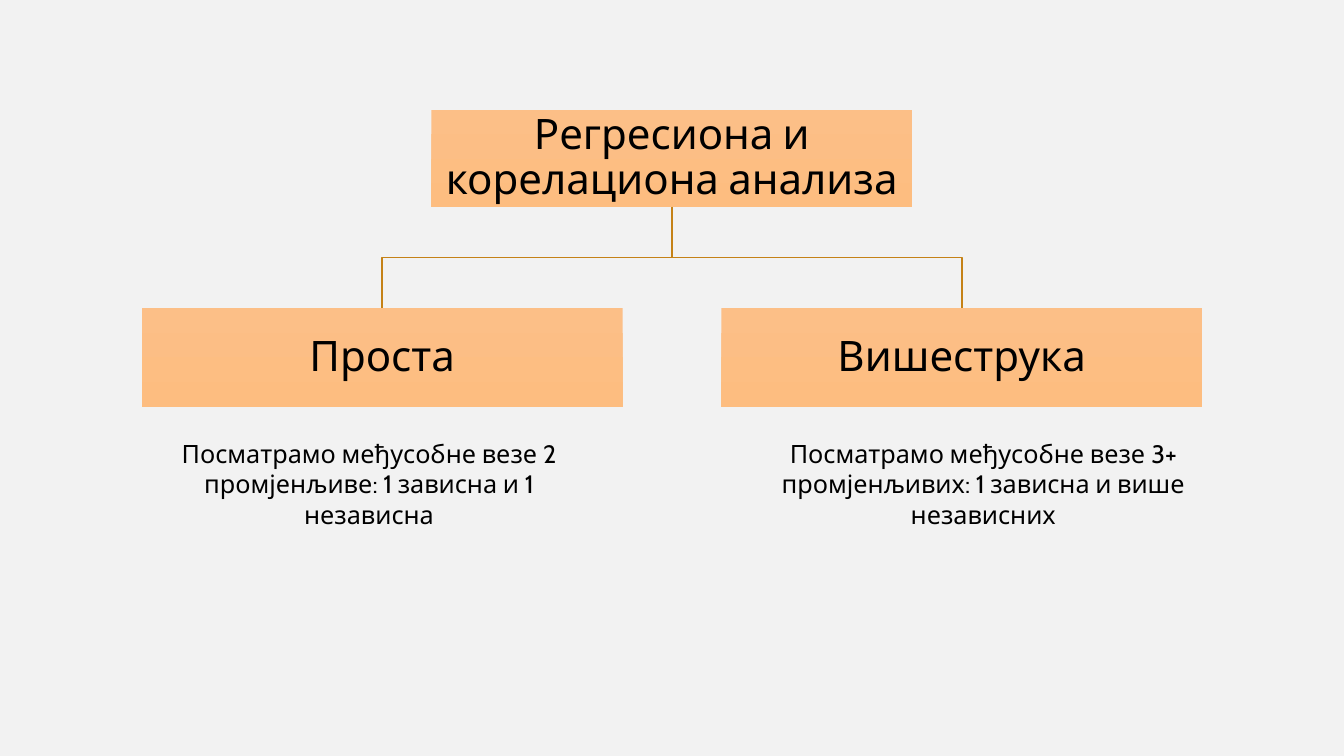
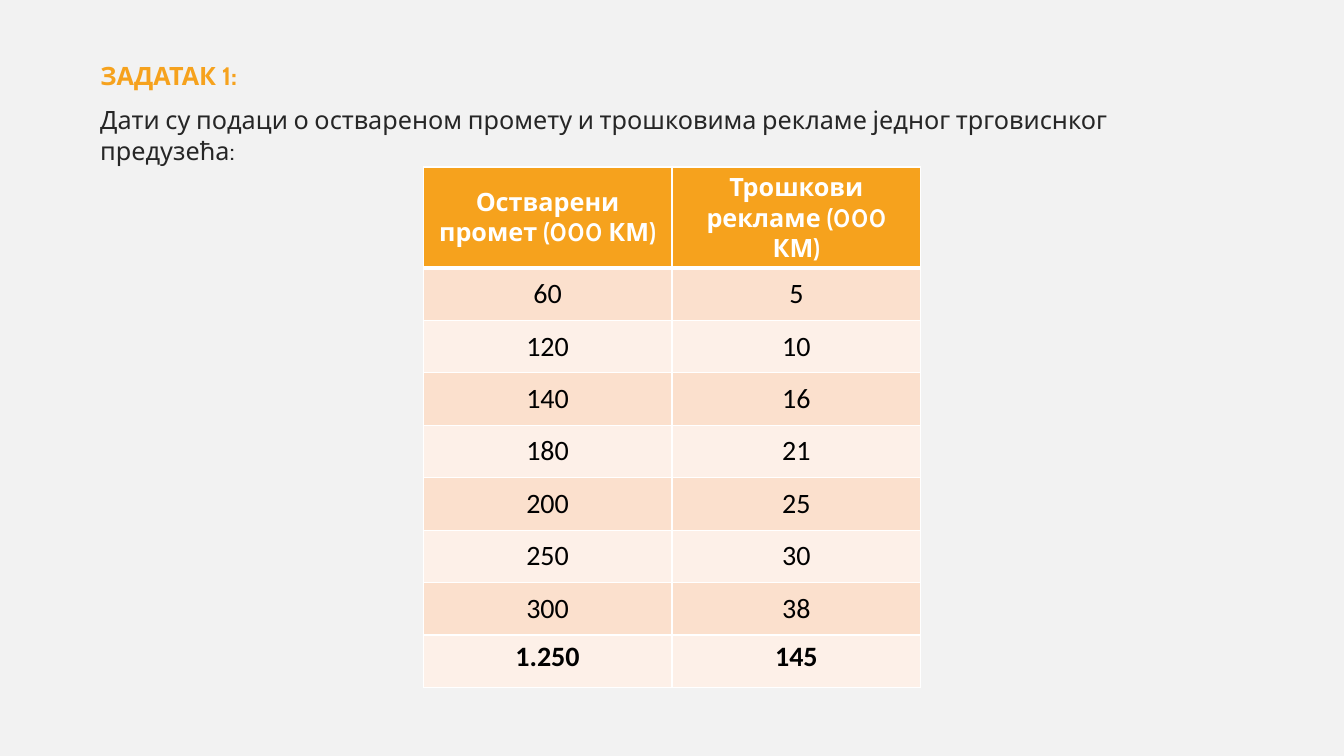
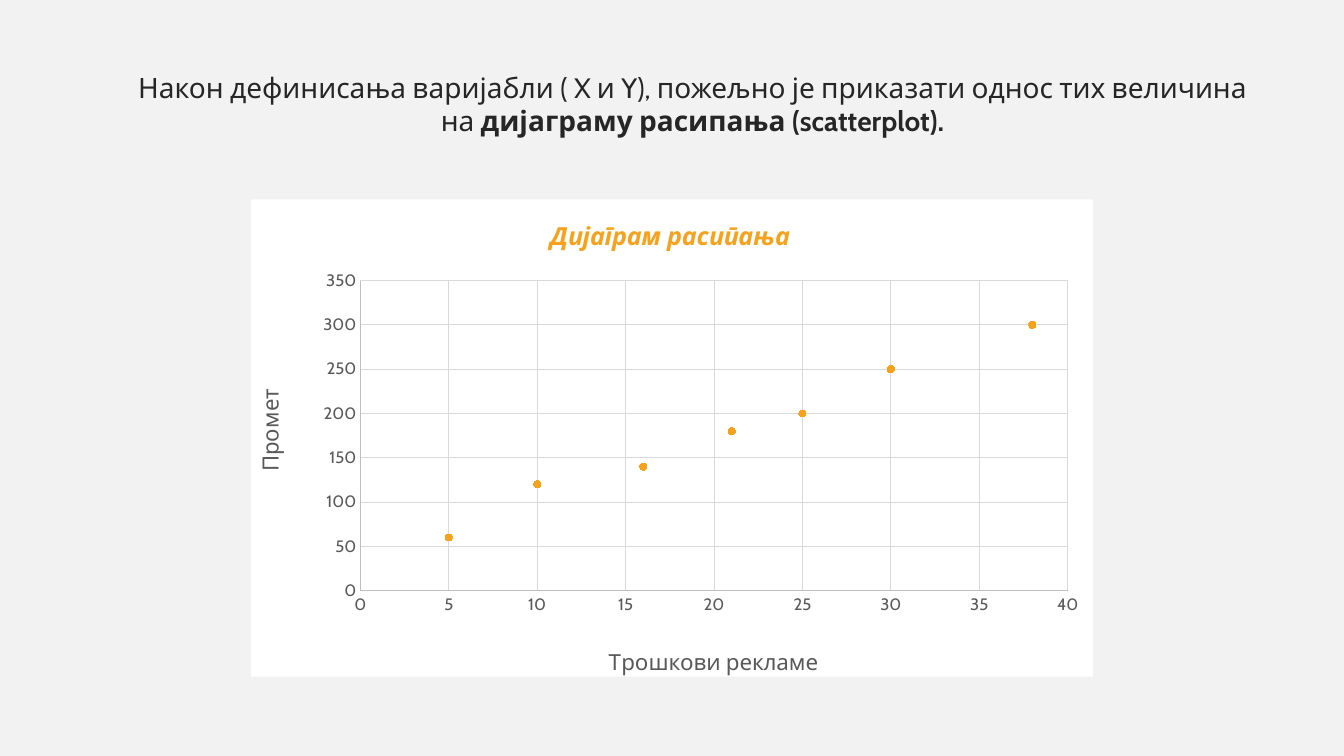
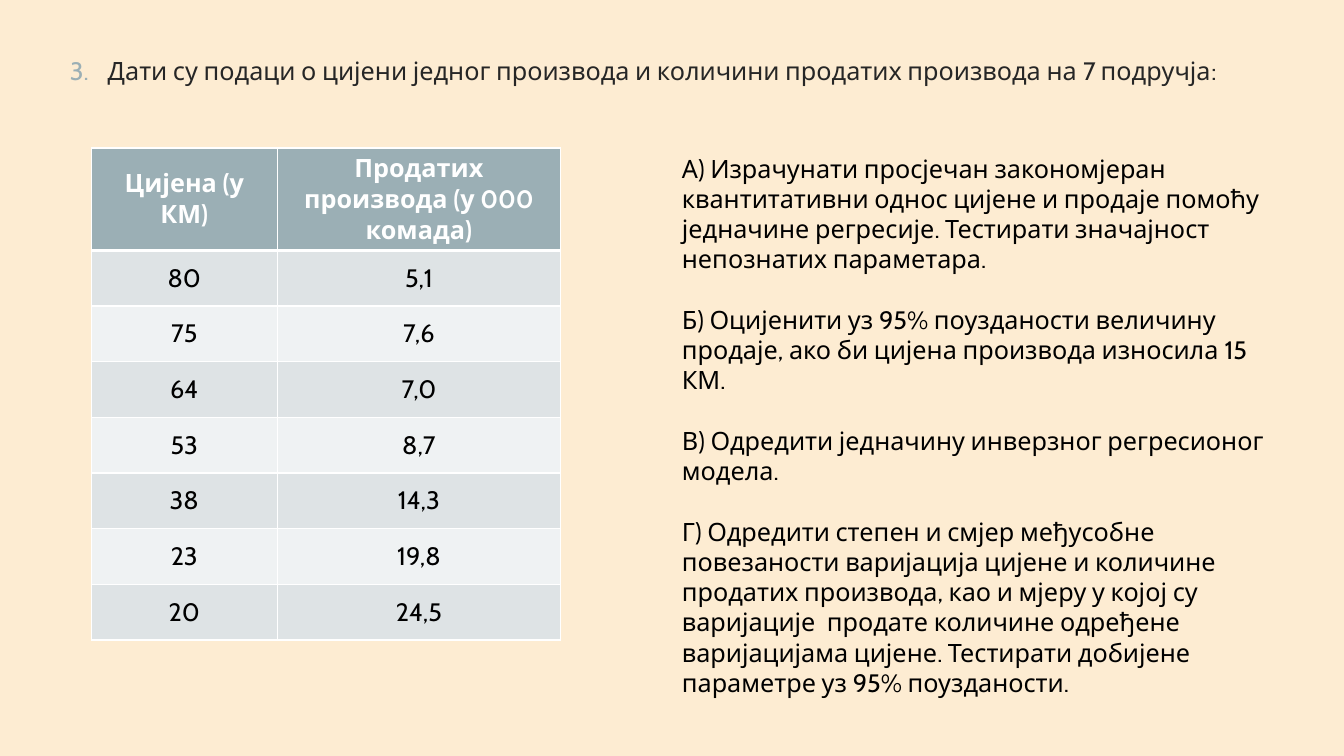
"""Build four slides on simple and multiple regression and correlation analysis."""
from lxml import etree
from pptx import Presentation
from pptx.chart.data import XyChartData
from pptx.dml.color import RGBColor
from pptx.enum.chart import XL_CHART_TYPE, XL_MARKER_STYLE, XL_TICK_MARK
from pptx.enum.shapes import MSO_CONNECTOR, MSO_SHAPE
from pptx.enum.text import MSO_ANCHOR, MSO_AUTO_SIZE, PP_ALIGN
from pptx.oxml import parse_xml
from pptx.oxml.ns import nsdecls, qn
from pptx.util import Emu, Pt

LEFT, CENTER = PP_ALIGN.LEFT, PP_ALIGN.CENTER
TOP, MIDDLE = MSO_ANCHOR.TOP, MSO_ANCHOR.MIDDLE
NO_FIT = MSO_AUTO_SIZE.NONE
ELBOW, RECTANGLE = MSO_CONNECTOR.ELBOW, MSO_SHAPE.RECTANGLE
SCATTER, CIRCLE = XL_CHART_TYPE.XY_SCATTER, XL_MARKER_STYLE.CIRCLE
NO_TICK = XL_TICK_MARK.NONE

BLACK = RGBColor(0x00, 0x00, 0x00)
WHITE = RGBColor(0xFF, 0xFF, 0xFF)
INK = RGBColor(0x26, 0x26, 0x26)
PAPER = RGBColor(0xF2, 0xF2, 0xF2)
CREAM = RGBColor(0xFD, 0xEC, 0xD2)
ORANGE = RGBColor(0xF6, 0xA2, 0x1D)
BROWN = RGBColor(0xC5, 0x82, 0x17)
BOX_TOP = RGBColor(0xFC, 0xBF, 0x87)
BOX_BOTTOM = RGBColor(0xFD, 0xBD, 0x80)
ORANGE_BANDS = (RGBColor(0xFB, 0xE0, 0xCD), RGBColor(0xFD, 0xF0, 0xE8))
STEEL = RGBColor(0x9B, 0xAF, 0xB5)
STEEL_BANDS = (RGBColor(0xDE, 0xE3, 0xE5), RGBColor(0xEF, 0xF2, 0xF3))
AXIS_TEXT = RGBColor(0x59, 0x59, 0x59)
AXIS_LINE = RGBColor(0xBF, 0xBF, 0xBF)
GRID_LINE = RGBColor(0xD9, 0xD9, 0xD9)

FONT = "Cabin"
LANGUAGE = "sr-Cyrl-BA"
PX = 9525
SLIDE_SIZE = (1280, 720)
CONTENT_LAYOUT, TITLE_LAYOUT, BLANK_LAYOUT = 1, 5, 6

ROOT = "Регресиона и корелациона анализа"
BRANCHES = [
    ("Проста", 122, "Посматрамо међусобне везе 2 промјенљиве: 1 зависна и 1 независна"),
    ("Вишеструка", 707, "Посматрамо међусобне везе 3+ промјенљивих: 1 зависна и више независних"),
]

TASK = "ЗАДАТАК 1:"
TASK_TEXT = "Дати су подаци о оствареном промету и трошковима рекламе једног трговиснког предузећа:"
SALES_HEADER = ("Остварени промет (000 КМ)", "Трошкови рекламе (000 КМ)")
SALES = [(60, 5), (120, 10), (140, 16), (180, 21), (200, 25), (250, 30), (300, 38)]
SALES_TOTAL = ("1.250", "145")

PLOT_INTRO = "Након дефинисања варијабли ( X и Y), пожељно је приказати однос тих величина на "
PLOT_TERM = "дијаграму расипања (scatterplot)."
CHART_TITLE = "Дијаграм расипања"
PLOT_LAYOUT = {"x": 0.13, "y": 0.17, "w": 0.84, "h": 0.65}

EXERCISE = "Дати су подаци о цијени једног производа и количини продатих производа на 7 подручја:"
EXERCISE_NUMBER = 3
PRICES = [
    ("Цијена (у КМ)", "Продатих производа (у 000 комада)"),
    ("80", "5,1"), ("75", "7,6"), ("64", "7,0"), ("53", "8,7"),
    ("38", "14,3"), ("23", "19,8"), ("20", "24,5"),
]
QUESTIONS = [
    "А) Израчунати просјечан закономјеран квантитативни однос цијене и продаје помоћу "
    "једначине регресије. Тестирати значајност непознатих параметара.",
    "Б) Оцијенити уз 95% поузданости величину продаје, ако би цијена производа износила 15 КМ.",
    "В) Одредити једначину инверзног регресионог модела.",
    "Г) Одредити степен и смјер међусобне повезаности варијација цијене и количине "
    "продатих производа, као и мјеру у којој су варијације  продате количине одређене "
    "варијацијама цијене. Тестирати добијене параметре уз 95% поузданости.",
]


def px(*lengths):
    return [Emu(round(length * PX)) for length in lengths]


def style(frame, size, color, align=LEFT, bold=False, font=FONT):
    for paragraph in frame.paragraphs:
        paragraph.alignment = align
        for span in paragraph.runs:
            span.font.size = Pt(size)
            span.font.name = font
            span.font.bold = bold
            span.font.color.rgb = color
            span._r.get_or_add_rPr().set("lang", LANGUAGE)


def place(item, area):
    item.left, item.top, item.width, item.height = px(*area)


def add_text(page, area, text, size, color, align=LEFT):
    frame = page.shapes.add_textbox(*px(*area)).text_frame
    frame.word_wrap = True
    frame.text = text
    style(frame, size, color, align)
    return frame


def fill_placeholder(holder, area, text):
    place(holder, area)
    frame = holder.text_frame
    frame.text = text
    frame.word_wrap = True
    frame.auto_size = NO_FIT
    frame.vertical_anchor = TOP
    frame.paragraphs[0].space_before = Pt(0)
    return frame


def add_box(page, text, area):
    box = page.shapes.add_shape(RECTANGLE, *px(*area))
    box.shadow.inherit = False
    box.line.fill.background()
    box.fill.gradient()
    box.fill.gradient_angle = 270
    for stop, color in zip(box.fill.gradient_stops, (BOX_TOP, BOX_BOTTOM)):
        stop.color.rgb = color
    frame = box.text_frame
    frame.text = text
    frame.word_wrap = True
    frame.vertical_anchor = MIDDLE
    frame.margin_left, frame.margin_top, frame.margin_right, frame.margin_bottom = px(2, 2, 2, 2)
    frame.paragraphs[0].line_spacing = 0.9
    style(frame, 30, BLACK, CENTER)
    return box


def join_boxes(page, parent, child, start, end):
    (start_x, start_y), (end_x, end_y) = start, end
    branch = page.shapes.add_connector(ELBOW, *px(*start, *end))
    branch.begin_connect(parent, 2)
    branch.end_connect(child, 0)
    across, down = abs(end_x - start_x), end_y - start_y
    middle_x, middle_y = (start_x + end_x) / 2, (start_y + end_y) / 2
    place(branch, (middle_x - down / 2, middle_y - across / 2, down, across))
    frame = branch._element.spPr.find(qn("a:xfrm"))
    rightward = end_x > start_x
    frame.set("rot", "16200000" if rightward else "5400000")
    frame.set("flipH", "1" if rightward else "0")
    branch.line.color.rgb = BROWN
    branch.line.width = Pt(1)
    etree.SubElement(branch._element.spPr, qn("a:effectLst"))


def set_borders(cell, header):
    properties = cell._tc.get_or_add_tcPr()
    for position, side in enumerate(("lnL", "lnR", "lnT", "lnB")):
        width = Pt(3 if header and side == "lnB" else 1)
        properties.insert(position, parse_xml(
            f'<a:{side} {nsdecls("a")} w="{width}"><a:solidFill>'
            f'<a:srgbClr val="{WHITE}"/></a:solidFill></a:{side}>'))


def add_grid(page, rows, origin, widths, row_height, header_color, bands, size, font):
    frame = page.shapes.add_table(
        len(rows), len(widths), *px(*origin, sum(widths), row_height * len(rows)))
    table = frame.table
    for column, width in zip(table.columns, widths):
        column.width = px(width)[0]
    for index, values in enumerate(rows):
        header = index == 0
        table.rows[index].height = px(row_height)[0]
        for cell, value in zip(table.rows[index].cells, values):
            cell.text = str(value)
            cell.vertical_anchor = MIDDLE
            cell.fill.solid()
            cell.fill.fore_color.rgb = header_color if header else bands[(index - 1) % 2]
            set_borders(cell, header)
            if header:
                style(cell.text_frame, 18, WHITE, CENTER, True)
            else:
                style(cell.text_frame, size, BLACK, CENTER, font=font)
    return table


def manual_layout(parent, fractions, inner=False):
    for old in parent.findall(qn("c:layout")):
        parent.remove(old)
    target = '<c:layoutTarget val="inner"/>' if inner else ""
    modes = "".join(f'<c:{key}Mode val="edge"/>' for key in ("x", "y"))
    values = "".join(f'<c:{key} val="{value}"/>' for key, value in fractions.items())
    layout = parse_xml(f'<c:layout {nsdecls("c")}><c:manualLayout>{target}{modes}{values}'
                       '</c:manualLayout></c:layout>')
    text = parent.find(qn("c:tx"))
    if text is None:
        parent.insert(0, layout)
    else:
        text.addnext(layout)


def set_chart_title(owner, text, size, color, spot, emphasis=False):
    owner.has_title = True
    title = getattr(owner, "chart_title", None) or owner.axis_title
    title.text_frame.text = text
    style(title.text_frame, size, color, CENTER, emphasis)
    title.text_frame.paragraphs[0].runs[0].font.italic = emphasis
    manual_layout(title._element, spot)


def add_scatter(page, area):
    data = XyChartData()
    points = data.add_series("Series 1")
    for turnover, advertising in SALES:
        points.add_data_point(advertising, turnover)
    chart = page.shapes.add_chart(SCATTER, *px(*area), data).chart
    chart.has_legend = False
    chart.font.name = FONT
    chart.font.size = Pt(10)
    chart.font.color.rgb = BLACK
    chart.plots[0].vary_by_categories = False
    series = chart.plots[0].series[0]
    series.smooth = False
    series.format.line.fill.background()
    series.marker.style = CIRCLE
    series.marker.size = 5
    series.marker.format.fill.solid()
    series.marker.format.fill.fore_color.rgb = ORANGE
    series.marker.format.line.color.rgb = ORANGE
    axes = [
        (chart.category_axis, "Трошкови рекламе", 40, 5, {"x": 0.42, "y": 0.93}),
        (chart.value_axis, "Промет", 350, 50, {"x": 0, "y": 0.39}),
    ]
    for axis, name, maximum, step, spot in axes:
        axis.minimum_scale, axis.maximum_scale, axis.major_unit = 0, maximum, step
        axis.major_tick_mark = axis.minor_tick_mark = NO_TICK
        axis.has_major_gridlines = True
        for line, color in ((axis.major_gridlines.format.line, GRID_LINE),
                            (axis.format.line, AXIS_LINE)):
            line.color.rgb = color
            line.width = Pt(0.75)
        axis.tick_labels.font.name = FONT
        axis.tick_labels.font.size = Pt(12)
        axis.tick_labels.font.color.rgb = AXIS_TEXT
        set_chart_title(axis, name, 16, AXIS_TEXT, spot)
    set_chart_title(chart, CHART_TITLE, 18, ORANGE, {"x": 0.35, "y": 0.03}, True)
    body = chart._chartSpace.find(qn("c:chart"))
    manual_layout(body.find(qn("c:plotArea")), PLOT_LAYOUT, True)
    body.addnext(parse_xml(
        f'<c:spPr {nsdecls("c", "a")}><a:solidFill><a:srgbClr val="{WHITE}"/></a:solidFill>'
        '<a:ln><a:noFill/></a:ln></c:spPr>'))


def number_paragraph(paragraph, start, color, indent):
    properties = paragraph._p.get_or_add_pPr()
    properties.set("marL", str(indent))
    properties.set("indent", str(-indent))
    bullet_color = etree.SubElement(properties, qn("a:buClr"))
    etree.SubElement(bullet_color, qn("a:srgbClr"), val=str(color))
    etree.SubElement(properties, qn("a:buFont"), typeface="+mj-lt")
    etree.SubElement(properties, qn("a:buAutoNum"), type="arabicPeriod", startAt=str(start))


def build_overview(page):
    middle, width, offset = 640, 458, 276
    root_top, root_height, branch_top, branch_height = 105, 92, 293, 95
    root = add_box(page, ROOT, (middle - width / 2, root_top, width, root_height))
    for side, (name, note_left, note) in zip((-1, 1), BRANCHES):
        center = middle + side * offset
        box = add_box(page, name, (center - width / 2, branch_top, width, branch_height))
        join_boxes(page, root, box, (middle, root_top + root_height), (center, branch_top))
        add_text(page, (note_left, 413, 459, 97), note, 18, BLACK, CENTER)


def build_task(page):
    title = fill_placeholder(page.shapes.title, (86, 53, 1108, 40), TASK)
    style(title, 18, ORANGE, bold=True)
    add_text(page, (86, 95, 1108, 68), TASK_TEXT, 18, INK)
    rows = [SALES_HEADER, *SALES, SALES_TOTAL]
    table = add_grid(page, rows, (403, 159), (237, 237), 50, ORANGE, ORANGE_BANDS, 20, "Calibri")
    for cell in table.rows[len(rows) - 1].cells:
        cell.vertical_anchor = TOP
        style(cell.text_frame, 20, BLACK, CENTER, True, "Calibri")


def build_plot(page):
    title = fill_placeholder(page.shapes.title, (118, 62, 1083, 80), PLOT_INTRO)
    term = title.paragraphs[0].add_run()
    term.text = PLOT_TERM
    style(title, 20, INK, CENTER)
    term.font.bold = True
    add_scatter(page, (239, 190, 802, 460))


def build_exercise(page):
    page.background.fill.solid()
    page.background.fill.fore_color.rgb = CREAM
    heading = page.shapes.title._element
    heading.getparent().remove(heading)
    body = fill_placeholder(page.placeholders[1], (57, 48, 1167, 48), EXERCISE)
    style(body, 18, INK)
    number_paragraph(body.paragraphs[0], EXERCISE_NUMBER, STEEL, px(36)[0])
    add_grid(page, PRICES, (87, 141), (177, 270), 53, STEEL, STEEL_BANDS, 18, FONT)
    questions = add_text(page, (640, 141, 600, 530), "\n".join(QUESTIONS), 18, BLACK)
    for paragraph in questions.paragraphs[:-1]:
        paragraph.space_after = Pt(21.6)


def main():
    deck = Presentation()
    deck.slide_width, deck.slide_height = px(*SLIDE_SIZE)
    background = deck.slide_master.background.fill
    background.solid()
    background.fore_color.rgb = PAPER
    pages = [
        (BLANK_LAYOUT, build_overview),
        (TITLE_LAYOUT, build_task),
        (TITLE_LAYOUT, build_plot),
        (CONTENT_LAYOUT, build_exercise),
    ]
    for layout, build in pages:
        build(deck.slides.add_slide(deck.slide_layouts[layout]))
    deck.save("out.pptx")


if __name__ == "__main__":
    main()
